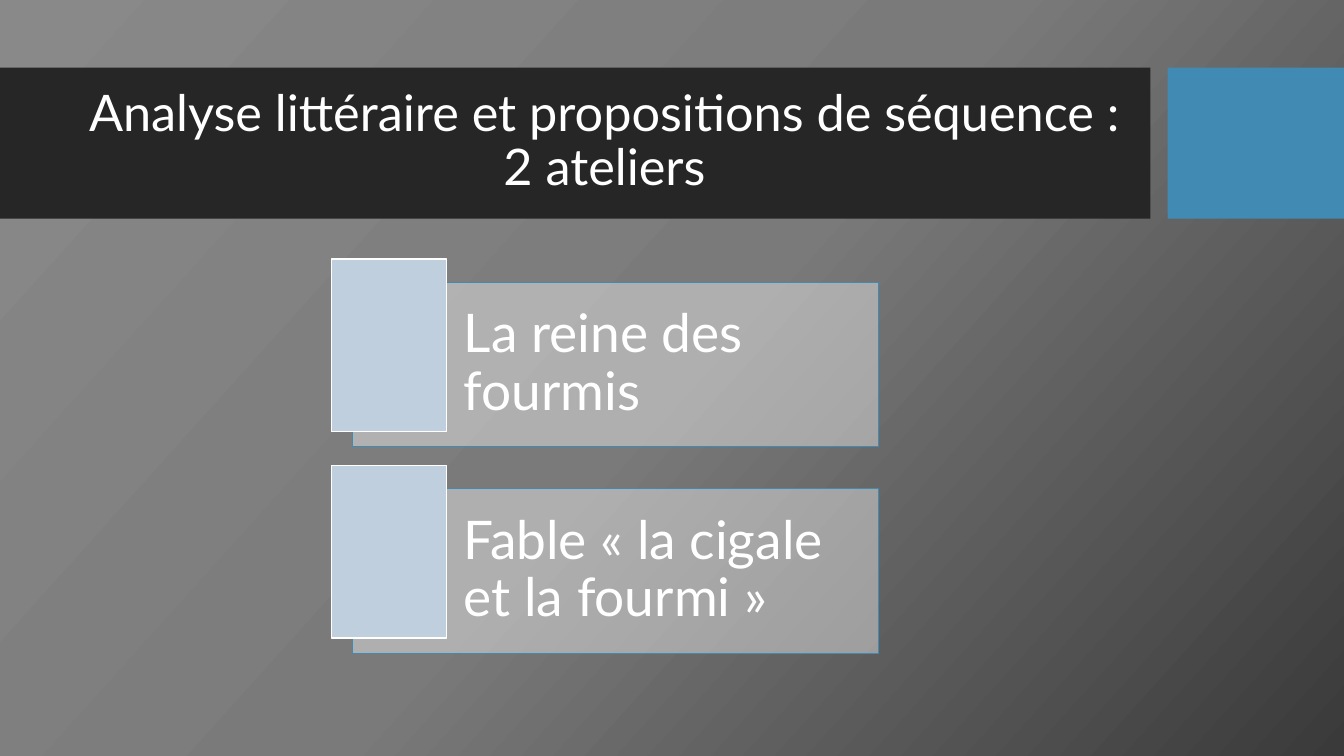
from copy import deepcopy

from lxml import etree
from pptx import Presentation, util as u
from pptx.dml.color import RGBColor
from pptx.enum import shapes, text as t
from pptx.oxml import ns

WHITE = RGBColor(0xFF, 0xFF, 0xFF)
DARK = RGBColor(0x26, 0x26, 0x26)
BLUE = RGBColor(0x41, 0x8A, 0xB3)
PALE = RGBColor(0xC0, 0xCF, 0xDD)
GREYS = (RGBColor(0x89, 0x89, 0x89), RGBColor(0x7A, 0x7A, 0x7A),
         RGBColor(0x3A, 0x3A, 0x3A))

WIDTH, HEIGHT = 13.33, 7.5
BAND_TOP, BAND_TALL = 0.67, 1.5
CARD_LEFT, CARD_TOP, CARD_STEP = 3.5, 2.8, 2.05
TAB_LEFT, TAB_RISE = 3.29, 0.23
CARDS = ("La reine des fourmis", "Fable « la cigale et la fourmi »")


def shade(slide):
    """Give the slide its three-stop diagonal background."""
    fill = slide.background.fill
    fill.gradient()
    fill.gradient_angle = 318
    first = slide.element.xpath(".//a:gs")[0]
    first.addnext(deepcopy(first))
    for i, (stop, grey) in enumerate(zip(fill.gradient_stops, GREYS)):
        stop.position = i / 2
        stop.color.rgb = grey


def block(slide, left, top, width, height, color, line=None, weight=1, alpha=None):
    """Add a rectangle; alpha is the opacity in percent."""
    box = slide.shapes.add_shape(
        shapes.MSO_SHAPE.RECTANGLE,
        *(u.Inches(n) for n in (left, top, width, height)))
    box.shadow.inherit = False
    box.fill.solid()
    box.fill.fore_color.rgb = color
    if alpha is not None:
        tint = box.element.spPr.find(".//" + ns.qn("a:srgbClr"))
        etree.SubElement(tint, ns.qn("a:alpha"), val=str(alpha * 1000))
    if line is None:
        box.line.fill.background()
    else:
        box.line.color.rgb = line
        box.line.width = u.Pt(weight)
    return box


def write(shape, words, size, align=t.PP_ALIGN.LEFT, inset=(0.1, 0.05, 0.1, 0.05)):
    frame = shape.text_frame
    frame.word_wrap = True
    frame.auto_size = t.MSO_AUTO_SIZE.NONE
    frame.vertical_anchor = t.MSO_ANCHOR.MIDDLE
    (frame.margin_left, frame.margin_top,
     frame.margin_right, frame.margin_bottom) = (u.Inches(n) for n in inset)
    frame.text = words
    para = frame.paragraphs[0]
    para.alignment = align
    para.line_spacing = 0.9
    para.space_before = u.Pt(0)
    font = para.runs[0].font
    font.name, font.size, font.color.rgb = "Lato", u.Pt(size), WHITE


def header(slide, words):
    block(slide, 0, BAND_TOP, 11.41, BAND_TALL, DARK)
    block(slide, 11.58, BAND_TOP, 1.75, BAND_TALL, BLUE)
    title = slide.shapes.title
    slide.shapes.element.append(title.element)
    title.left, title.top = u.Inches(0.74), u.Inches(0.82)
    title.width, title.height = u.Inches(10.51), u.Inches(1.18)
    write(title, words, 36, align=t.PP_ALIGN.CENTER)


def card(slide, row, words):
    top = CARD_TOP + row * CARD_STEP
    panel = block(slide, CARD_LEFT, top, 5.21, 1.63, WHITE, BLUE, 0.75, alpha=40)
    write(panel, words, 38, inset=(1.1, 0.16, 0.16, 0.16))
    block(slide, TAB_LEFT, top - TAB_RISE, 1.14, 1.71, PALE, WHITE)


def main():
    deck = Presentation()
    deck.slide_width, deck.slide_height = u.Inches(WIDTH), u.Inches(HEIGHT)
    slide = deck.slides.add_slide(deck.slide_layouts[5])
    shade(slide)
    header(slide, "Analyse littéraire et propositions de séquence : 2 ateliers")
    for row, words in enumerate(CARDS):
        card(slide, row, words)
    deck.save("out.pptx")


if __name__ == "__main__":
    main()
